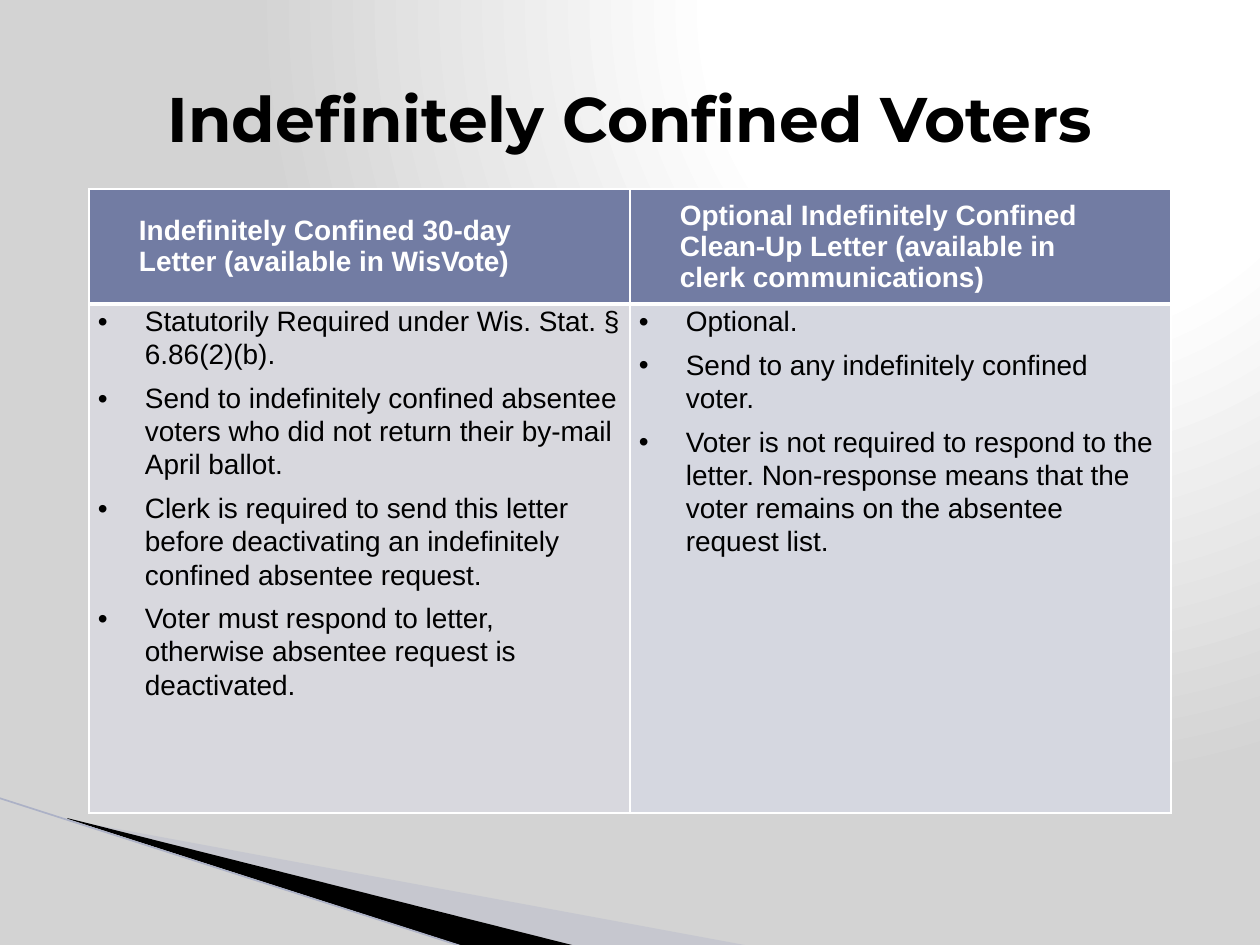
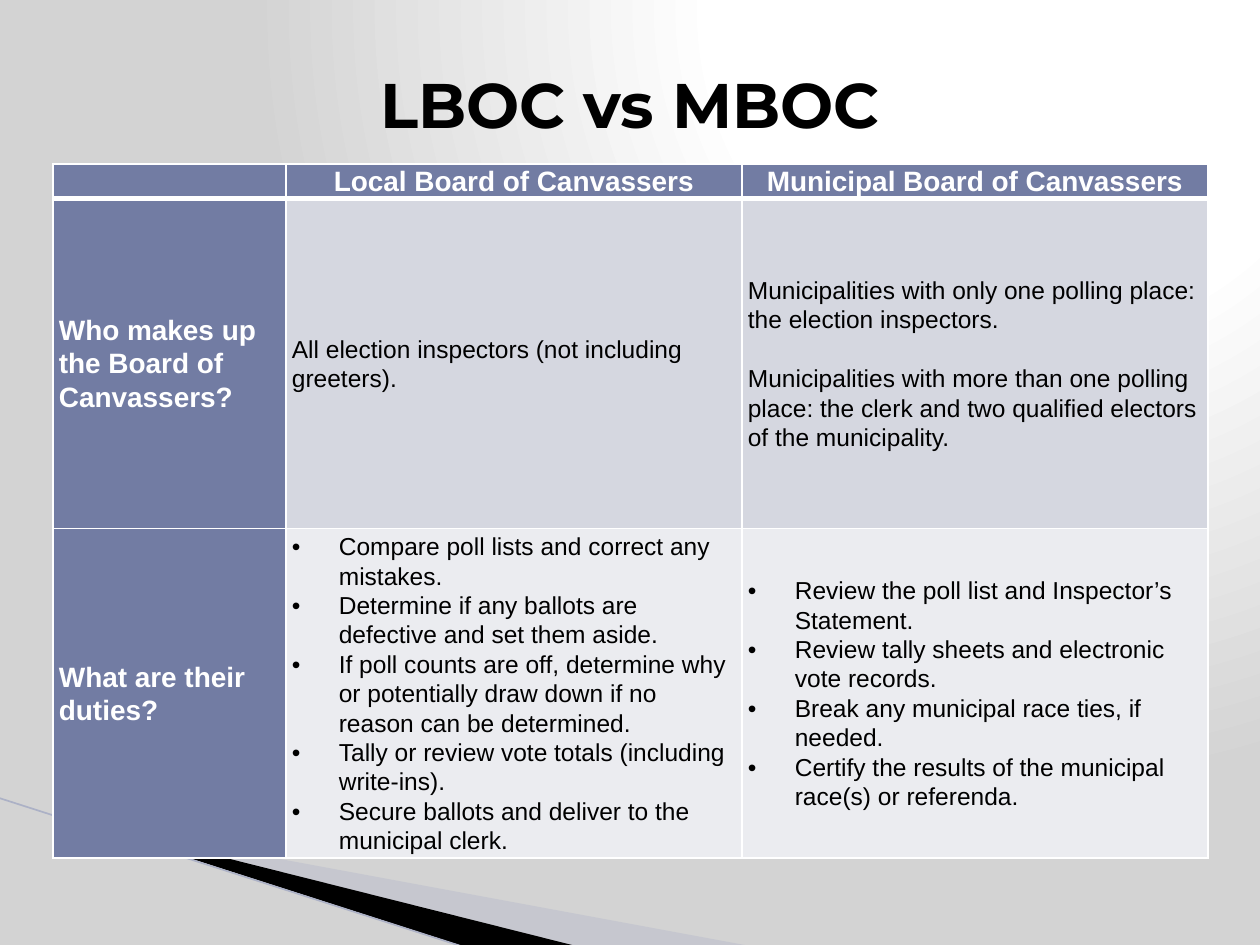
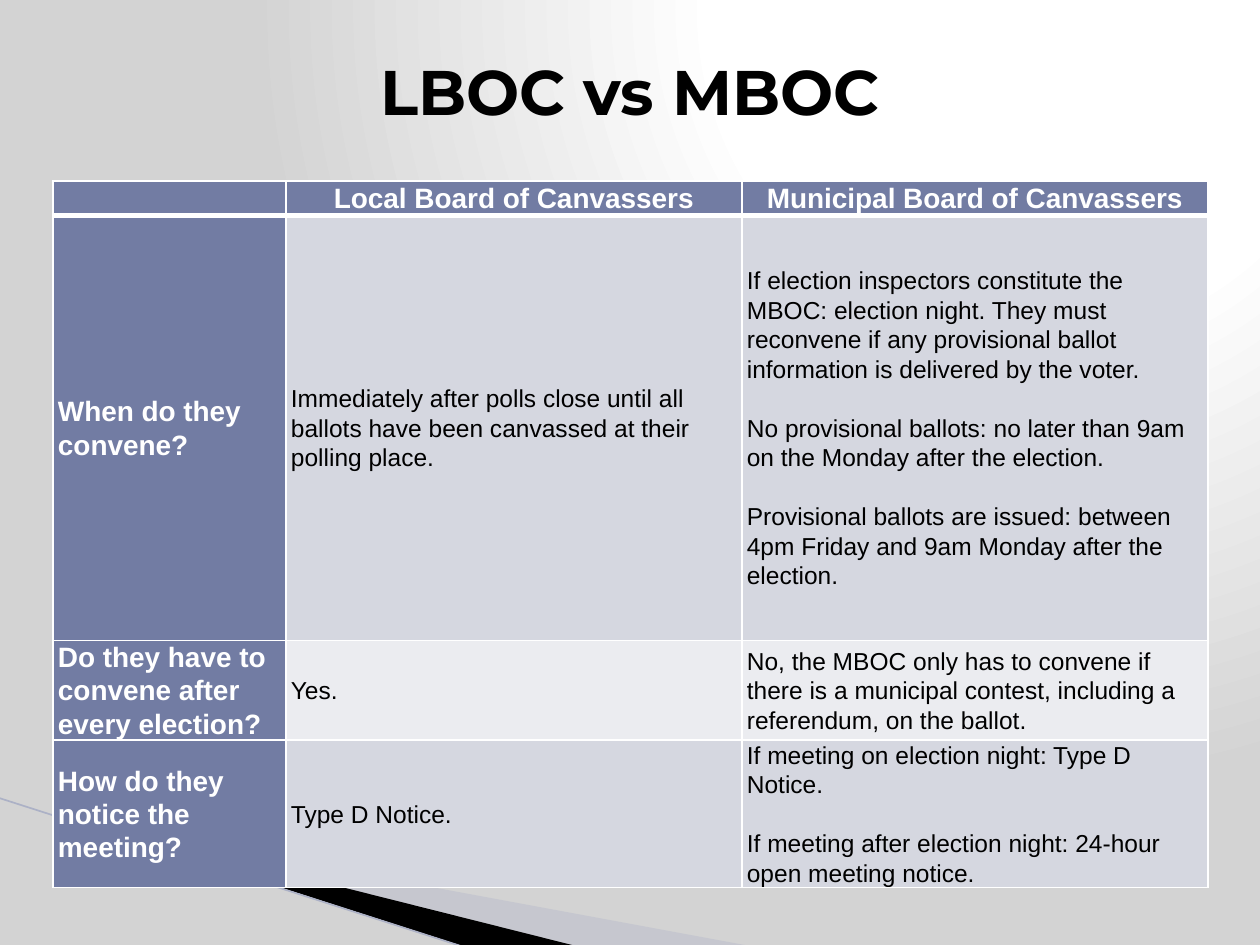
from lxml import etree
from pptx import Presentation
from pptx import util as u
from pptx.dml import color
from pptx.enum import shapes, text
from pptx.oxml import ns, parse_xml

PX = 914400 / 126
WHITE, BLACK, SLATE, STEEL = "FFFFFF", "000000", "727CA3", "D5D7E0"
MID, TOP = text.MSO_ANCHOR.MIDDLE, text.MSO_ANCHOR.TOP
LEFT, CENTER = text.PP_ALIGN.LEFT, text.PP_ALIGN.CENTER


def hue(code):
    return color.RGBColor.from_string(code)


def put(frame, lines, size=16, font="Arial", ink=BLACK, bold=False, align=LEFT,
        lead=None, gap=0, after=0, dot=False, pad=0):
    for i, line in enumerate(lines):
        para = frame.paragraphs[0] if i == 0 else frame.add_paragraph()
        props = para._p.get_or_add_pPr()
        if dot:
            props.set("marL", str(int(47 * PX)))
            props.set("indent", str(int(-47 * PX)))
            etree.SubElement(props, ns.qn("a:buFont")).set("typeface", "Arial")
            etree.SubElement(props, ns.qn("a:buChar")).set("char", "•")
        if pad:
            props.set("marL", str(int(pad * PX)))
            props.set("marR", str(int(pad * PX)))
        para.alignment = align
        if lead:
            para.line_spacing = lead
        if i and gap:
            para.space_before = u.Pt(gap)
        if after:
            para.space_after = u.Pt(after)
        if not line:
            etree.SubElement(para._p, ns.qn("a:endParaRPr")).set("sz", str(size * 100))
            continue
        run = para.add_run()
        run.text = line
        run.font.size, run.font.name, run.font.bold = u.Pt(size), font, bold
        run.font.color.rgb = hue(ink)


deck = Presentation()
deck.slide_width, deck.slide_height = u.Inches(10), u.Inches(7.5)
pages = [deck.slides.add_slide(deck.slide_layouts[5]) for _ in range(3)]

master = deck.slide_master
master.background.fill.solid()
solid = master.element.xpath(".//p:bgPr/a:solidFill")[0]
stops = "".join(
    f'<a:gs pos="{pos}000"><a:srgbClr val="{code}"/></a:gs>'
    for pos, code in ((0, WHITE), (40, WHITE), (100, "D3D3D3")))
solid.getparent().replace(solid, parse_xml(
    f'<a:gradFill {ns.nsdecls("a")} rotWithShape="1"><a:gsLst>{stops}</a:gsLst>'
    '<a:path path="circle"><a:fillToRect l="65000" b="98000"/></a:path></a:gradFill>'))

wedges = (
    ("B3B7CB", 40, [(69, 820), (750, 946), (575, 946), (69, 819)]),
    (BLACK, 100, [(67, 818), (576, 946), (469, 948), (68, 819)]),
)
decor = []
for tint, alpha, points in wedges:
    pen = pages[0].shapes.build_freeform(*points[0], scale=PX)
    pen.add_line_segments(points[1:], close=True)
    wedge = pen.convert_to_shape()
    wedge.shadow.inherit = False
    wedge.fill.solid()
    wedge.fill.fore_color.rgb = hue(tint)
    wedge.line.fill.background()
    if alpha < 100:
        code = wedge.element.xpath("./p:spPr/a:solidFill/a:srgbClr")[0]
        etree.SubElement(code, ns.qn("a:alpha")).set("val", f"{alpha}000")
    decor.append(wedge)
edge = pages[0].shapes.add_connector(
    shapes.MSO_CONNECTOR.STRAIGHT, *(int(n * PX) for n in (-1, 798, 467, 948)))
edge.line.color.rgb, edge.line.width = hue("ACB1C6"), u.Pt(0.95)
etree.SubElement(edge.element.spPr, ns.qn("a:effectLst"))
decor.append(edge)
for i, part in enumerate(decor):
    part.element.xpath(".//p:cNvPr")[0].set("id", str(20 + i))
    master.shapes.element.insert(2 + i, part.element)

BOARDS = ["", "Local Board of Canvassers", "Municipal Board of Canvassers"]
COLS = (233, 456, 466)
plans = (
    dict(title="Indefinitely Confined Voters", box=(63, 38, 1134, 158),
         at=(89, 189), cols=(541, 541), rows=(115, 509), inset=9, cells=[
        ["Indefinitely Confined 30-day Letter (available in WisVote)",
         "Optional Indefinitely Confined Clean-Up Letter (available in clerk communications)"],
        [["Statutorily Required under Wis. Stat. § 6.86(2)(b).",
          "Send to indefinitely confined absentee voters who did not return their by-mail April ballot.",
          "Clerk is required to send this letter before deactivating an indefinitely confined absentee request.",
          "Voter must respond to letter, otherwise absentee request is deactivated."],
         ["Optional.",
          "Send to any indefinitely confined voter.",
          "Voter is not required to respond to the letter. Non-response means that the voter remains on the absentee request list."]],
    ]),
    dict(title="LBOC vs MBOC", box=(63, 38, 1134, 130),
         at=(53, 164), cols=COLS, rows=(33, 330, 330), inset=6, cells=[
        BOARDS,
        ["Who makes up the Board of Canvassers?",
         "All election inspectors (not including greeters).",
         "Municipalities with only one polling place: the election inspectors.\n"
         "Municipalities with more than one polling place: the clerk and two qualified electors of the municipality."],
        ["What are their duties?",
         ["Compare poll lists and correct any mistakes.",
          "Determine if any ballots are defective and set them aside.",
          "If poll counts are off, determine why or potentially draw down if no reason can be determined.",
          "Tally or review vote totals (including write-ins).",
          "Secure ballots and deliver to the municipal clerk."],
         ["Review the poll list and Inspector’s Statement.",
          "Review tally sheets and electronic vote records.",
          "Break any municipal race ties, if needed.",
          "Certify the results of the municipal race(s) or referenda."]],
    ]),
    dict(title="LBOC vs MBOC", box=(63, 0, 1134, 181),
         at=(53, 181), cols=COLS, rows=(33, 425, 92, 141), inset=5, cells=[
        BOARDS,
        ["When do they convene?",
         "Immediately after polls close until all ballots have been canvassed at their polling place.",
         "If election inspectors constitute the MBOC: election night. They must reconvene if any provisional ballot information is delivered by the voter.\n"
         "No provisional ballots: no later than 9am on the Monday after the election.\n"
         "Provisional ballots are issued: between 4pm Friday and 9am Monday after the election."],
        ["Do they have to convene after every election?",
         "Yes.",
         "No, the MBOC only has to convene if there is a municipal contest, including a referendum, on the ballot."],
        ["How do they notice the meeting?",
         "Type D Notice.",
         "If meeting on election night: Type D Notice.\n"
         "If meeting after election night: 24-hour open meeting notice."],
    ]),
)

for page, plan in zip(pages, plans):
    title = page.shapes.title
    title.left, title.top, title.width, title.height = (int(n * PX) for n in plan["box"])
    title.text_frame.vertical_anchor = MID
    put(title.text_frame, [plan["title"]], size=36, font="Montserrat", bold=True, align=CENTER)

    cols, rows = plan["cols"], plan["rows"]
    side = len(cols) == 3
    size = (*plan["at"], sum(cols), sum(rows))
    grid = page.shapes.add_table(len(rows), len(cols), *(int(n * PX) for n in size)).table
    grid.horz_banding = False
    grid.first_col = side
    for c, wide in enumerate(cols):
        grid.columns[c].width = int(wide * PX)
    for r, tall in enumerate(rows):
        grid.rows[r].height = int(tall * PX)
        for c, words in enumerate(plan["cells"][r]):
            cell = grid.cell(r, c)
            head = r == 0 or (side and c == 0)
            dot = isinstance(words, list)
            cell.margin_left = cell.margin_right = int(plan["inset"] * PX)
            cell.margin_top = cell.margin_bottom = 0
            cell.vertical_anchor = MID if side == (r > 0) else TOP
            if head:
                tint = SLATE
            elif side:
                tint = ("EBECF0", STEEL)[r % 2]
            else:
                tint = ("D8D8DE", STEEL)[c]
            cell.fill.solid()
            cell.fill.fore_color.rgb = hue(tint)
            props = cell._tc.get_or_add_tcPr()
            for i, name in enumerate("LRTB"):
                thick = (r, name) in ((0, "B"), (1, "T"))
                props.insert(i, parse_xml(
                    f'<a:ln{name} {ns.nsdecls("a")} w="{u.Pt(3 if thick else 1)}">'
                    f'<a:solidFill><a:srgbClr val="{WHITE}"/></a:solidFill></a:ln{name}>'))
            put(cell.text_frame, words if dot else words.split("\n"),
                size=14 if side and not head else 16,
                ink=WHITE if head else BLACK, bold=head,
                align=CENTER if side and r == 0 else LEFT,
                lead=1.07 if side or r else None,
                gap=0 if dot else 17, after=6 if dot and not side else 0,
                dot=dot, pad=0 if side or r else 41)

deck.save("out.pptx")
